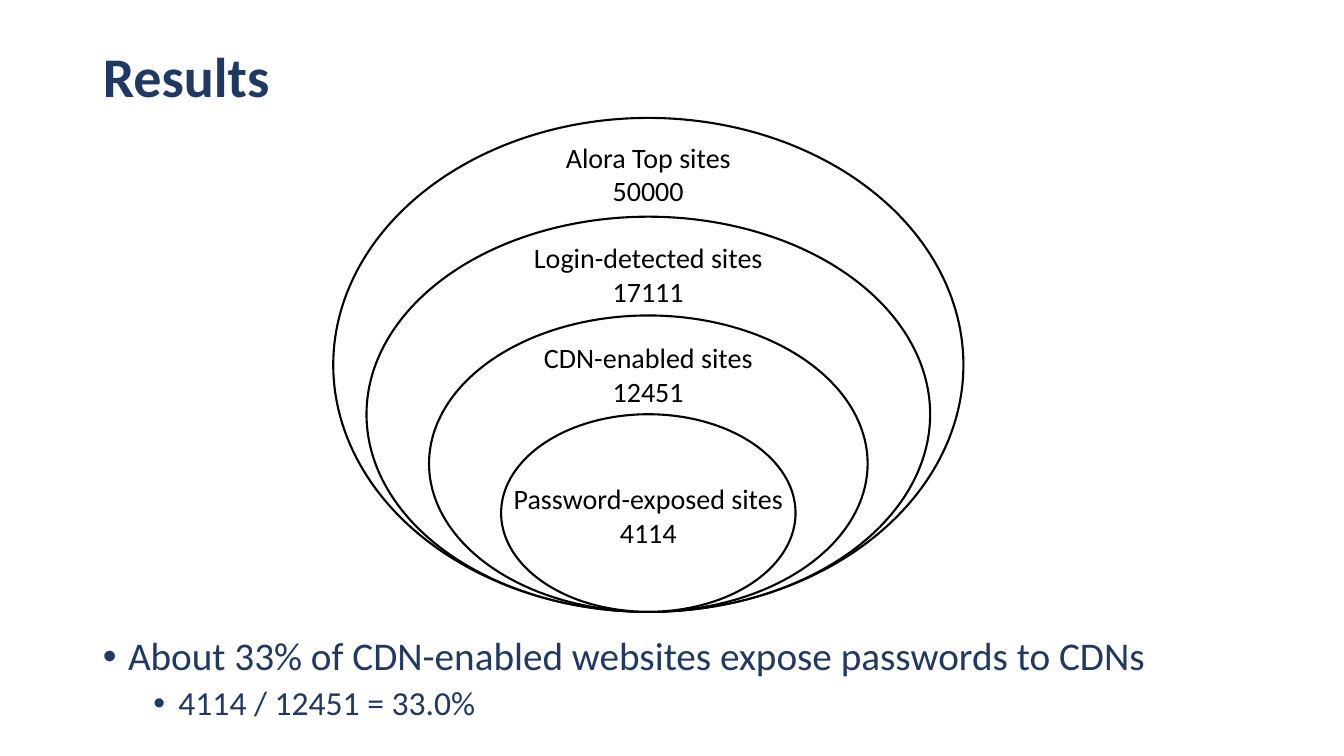
from lxml import etree
from pptx import Presentation
from pptx import util as u
from pptx.dml.color import RGBColor
from pptx.enum import shapes, text
from pptx.oxml import ns

NAVY = RGBColor(0x20, 0x38, 0x64)
BLACK = RGBColor(0, 0, 0)
WHITE = RGBColor(0xFF, 0xFF, 0xFF)

LEFT, TOP, WIDE = 0.92, 1.17, 11.5  # left edge, end of title, text width
MID = 6.43                          # axis shared by the rings
STEP = 0.98                         # height of one band


def place(shape, *box):
    shape.left, shape.top, shape.width, shape.height = map(u.Inches, box)


def write(par, words, size, color, bold=False, align=text.PP_ALIGN.LEFT,
          space=1.0, before=0, level=0, bullet=None):
    par.text = words
    par.level = level
    if bullet:
        props = par._p.get_or_add_pPr()
        props.set("marL", str(u.Inches(0.25 + 0.5 * level)))
        props.set("indent", str(u.Inches(-0.25)))
        etree.SubElement(props, ns.qn("a:buFont")).set("typeface", "Arial")
        etree.SubElement(props, ns.qn("a:buChar")).set("char", bullet)
    par.alignment = align
    par.line_spacing = space
    par.space_before = u.Pt(before)
    font = par.runs[0].font
    font.name, font.size, font.bold = "Calibri", u.Pt(size), bold
    font.color.rgb = color


deck = Presentation()
deck.slide_width, deck.slide_height = u.Inches(13.33), u.Inches(7.5)
slide = deck.slides.add_slide(deck.slide_layouts[1])

title, body = slide.placeholders
place(title, LEFT, 0.4, WIDE, TOP - 0.4)
title.text_frame.vertical_anchor = text.MSO_ANCHOR.MIDDLE
write(title.text_frame.paragraphs[0], "Results", 40, NAVY, bold=True, space=0.9)

place(body, LEFT, 6.27, WIDE, 1.02)
frame = body.text_frame
frame.auto_size = text.MSO_AUTO_SIZE.NONE
frame.vertical_anchor = text.MSO_ANCHOR.TOP
write(frame.paragraphs[0],
      "About 33% of CDN-enabled websites expose passwords to CDNs",
      28, NAVY, space=0.9, bullet="•")
write(frame.add_paragraph(), "4114 / 12451 = 33.0%",
      24, NAVY, space=0.9, before=5, level=1, bullet="•")

# ring width, label top, label, count
rings = [
    (6.25, 1.34, "Alora Top sites", "50000"),
    (5.59, 2.34, "Login-detected sites", "17111"),
    (4.35, 3.33, "CDN-enabled sites", "12451"),
    (2.92, 4.73, "Password-exposed sites", "4114"),
]
for row, (width, top, label, count) in enumerate(rings):
    ring = slide.shapes.add_shape(shapes.MSO_SHAPE.OVAL, 0, 0, 0, 0)
    place(ring, MID - width / 2, TOP + row * STEP, width, (5 - row) * STEP)
    ring.shadow.inherit = False
    ring.fill.solid()
    ring.fill.fore_color.rgb = WHITE
    ring.line.color.rgb = BLACK
    ring.line.width = u.Pt(1.5)

    note = slide.shapes.add_textbox(0, 0, 0, 0)
    place(note, MID - 1.45, top, 2.9, 0.77)
    frame = note.text_frame
    frame.word_wrap = False
    for par, words in ((frame.paragraphs[0], label),
                       (frame.add_paragraph(), count)):
        write(par, words, 20, BLACK, align=text.PP_ALIGN.CENTER)

deck.save("out.pptx")
